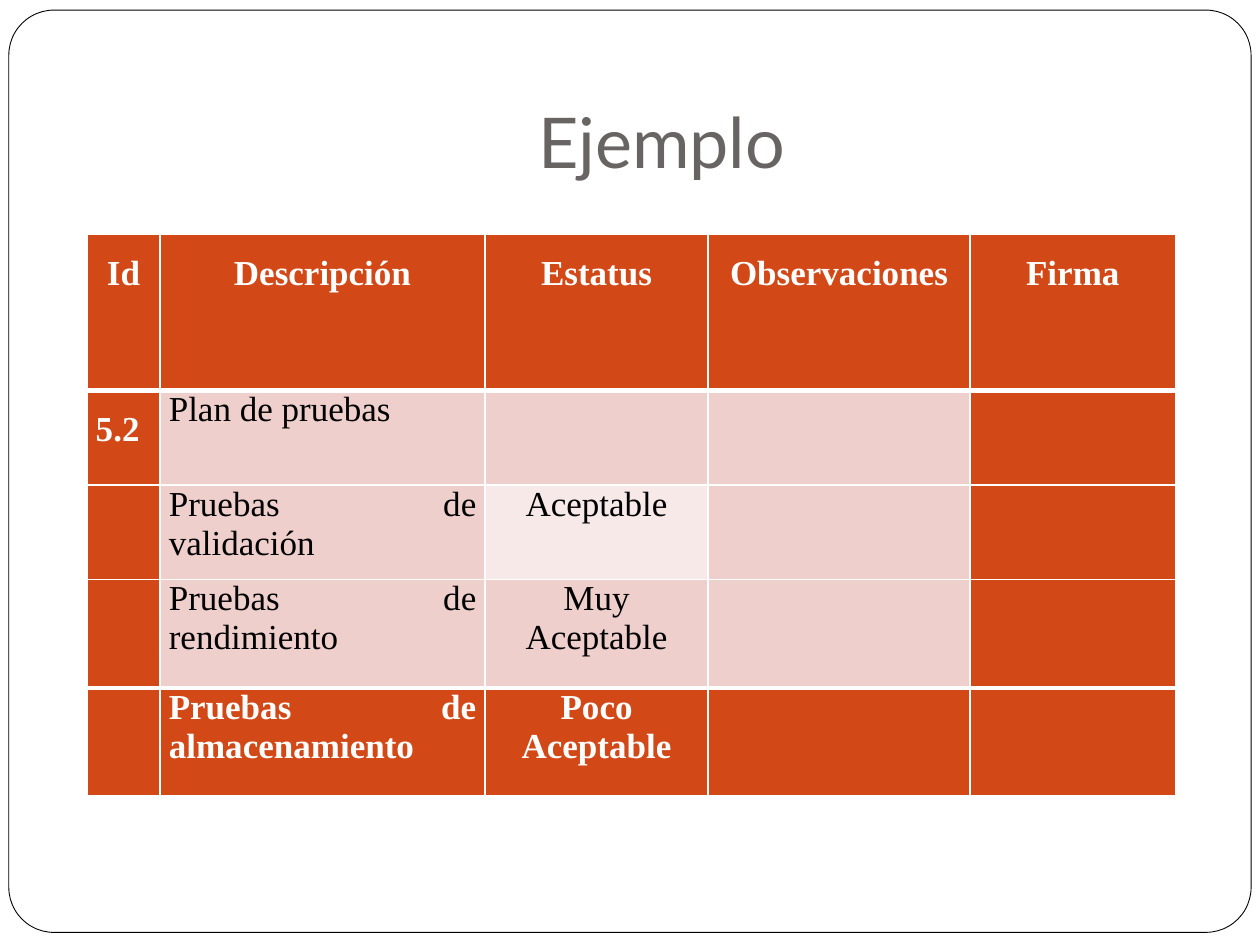
from dataclasses import dataclass

from lxml import etree
from pptx import Presentation
from pptx.dml.color import RGBColor
from pptx.enum import shapes, text
from pptx.oxml import ns
from pptx.util import Inches, Pt


@dataclass(frozen=True)
class Theme:
    white: str = "FFFFFF"
    black: str = "000000"
    title: str = "696464"
    accent: str = "D34817"
    band: str = "EFCFCC"
    light_band: str = "F7E9E8"
    title_font: str = "Lato"
    table_font: str = "Times New Roman"
    title_size: int = 40
    table_size: int = 20
    thin: int = 1
    thick: int = 3


THEME = Theme()
ALIGN = text.PP_ALIGN

COLUMN_WIDTHS = [0.58, 2.58, 1.77, 2.08, 1.63]
ROW_HEIGHTS = [1.24, 0.75, 0.75, 0.86, 0.86]
ROWS = [
    ["Id", "Descripción", "Estatus", "Observaciones", "Firma"],
    ["5.2", "Plan de pruebas", "", "", ""],
    ["", "Pruebas de validación", "Aceptable", "", ""],
    ["", "Pruebas de rendimiento", "Muy Aceptable", "", ""],
    ["", "Pruebas de almacenamiento", "Poco Aceptable", "", ""],
]
LAST_ROW, LAST_COLUMN = len(ROWS) - 1, len(COLUMN_WIDTHS) - 1
LIGHT_CELL = (2, 2)


def write(frame, words, *, font, size, color, bold=False, align=ALIGN.CENTER,
          line_spacing=None, gap=None):
    para = frame.paragraphs[0]
    para.alignment = align
    if line_spacing is not None:
        para.line_spacing = line_spacing
    if gap is not None:
        para.space_before = para.space_after = Pt(gap)
    span = para.add_run()
    span.text = words
    span.font.name = font
    span.font.size = Pt(size)
    span.font.bold = bold
    span.font.color.rgb = RGBColor.from_string(color)


def add_frame(page, left, top, width, height):
    """Draw the rounded outline around the page."""
    box = page.shapes.add_shape(shapes.MSO_SHAPE.ROUNDED_RECTANGLE,
                                left, top, width, height)
    box.adjustments[0] = 0.049
    box.shadow.inherit = False
    box.fill.solid()
    box.fill.fore_color.rgb = RGBColor.from_string(THEME.white)
    box.line.color.rgb = RGBColor.from_string(THEME.black)
    box.line.width = Pt(0.5)


def add_title(page, words, left, top, width, height):
    frame = page.shapes.add_textbox(left, top, width, height).text_frame
    frame.word_wrap = True
    frame.vertical_anchor = text.MSO_ANCHOR.BOTTOM
    frame.margin_left = frame.margin_right = frame.margin_bottom = Inches(0.1)
    frame.margin_top = Inches(0.05)
    write(frame, words, font=THEME.title_font, size=THEME.title_size,
          color=THEME.title)


def set_borders(cell, **widths):
    """Give the cell white borders; widths are in points, keyed L, R, T, B."""
    properties = cell._tc.get_or_add_tcPr()
    for position, (side, width) in enumerate(widths.items()):
        line = etree.Element(ns.qn(f"a:ln{side}"), w=str(Pt(width)))
        fill = etree.SubElement(line, ns.qn("a:solidFill"))
        etree.SubElement(fill, ns.qn("a:srgbClr"), val=THEME.white)
        properties.insert(position, line)


def format_cell(cell, row, column, words):
    is_heading = row == 0 or column == 0
    is_accent = is_heading or row == LAST_ROW or column == LAST_COLUMN
    if is_accent:
        fill = THEME.accent
    else:
        fill = THEME.light_band if (row, column) == LIGHT_CELL else THEME.band
    cell.fill.solid()
    cell.fill.fore_color.rgb = RGBColor.from_string(fill)
    cell.margin_left = cell.margin_right = Inches(0.07)
    cell.margin_top = cell.margin_bottom = 0
    set_borders(cell, L=THEME.thin, R=THEME.thin,
                T=THEME.thick if row in (1, LAST_ROW) else THEME.thin,
                B=THEME.thick if row in (0, LAST_ROW - 1) else THEME.thin)
    if words:
        justified = row > 0 and column < 2
        write(cell.text_frame, words, font=THEME.table_font,
              size=THEME.table_size, bold=is_accent,
              color=THEME.white if is_accent else THEME.black,
              align=ALIGN.JUSTIFY if justified else ALIGN.CENTER,
              line_spacing=1.5 if is_heading else None,
              gap=None if is_heading else 4)


def add_test_table(page, left, top):
    table = page.shapes.add_table(
        len(ROWS), len(COLUMN_WIDTHS), left, top,
        Inches(sum(COLUMN_WIDTHS)), Inches(sum(ROW_HEIGHTS))).table
    for column, width in zip(table.columns, COLUMN_WIDTHS):
        column.width = Inches(width)
    for row, height in zip(table.rows, ROW_HEIGHTS):
        row.height = Inches(height)
    for row, entries in enumerate(ROWS):
        for column, words in enumerate(entries):
            format_cell(table.cell(row, column), row, column, words)


def main():
    deck = Presentation()
    deck.slide_width, deck.slide_height = Inches(10), Inches(7.5)
    page = deck.slides.add_slide(deck.slide_layouts[6])
    add_frame(page, Inches(0.07), Inches(0.08), Inches(9.86), Inches(7.32))
    add_title(page, "Ejemplo", Inches(1), Inches(0.3), Inches(8.5), Inches(1.25))
    add_test_table(page, Inches(0.69), Inches(1.86))
    deck.save("out.pptx")


if __name__ == "__main__":
    main()
